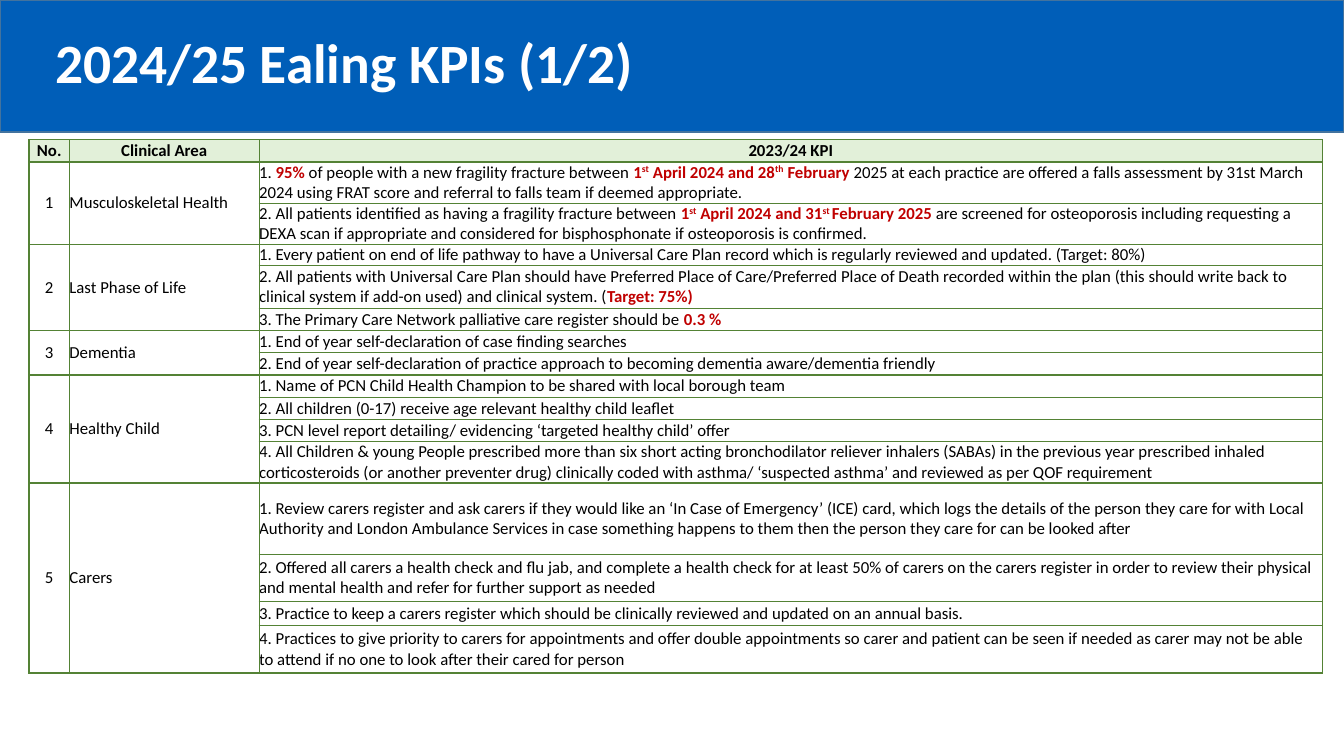
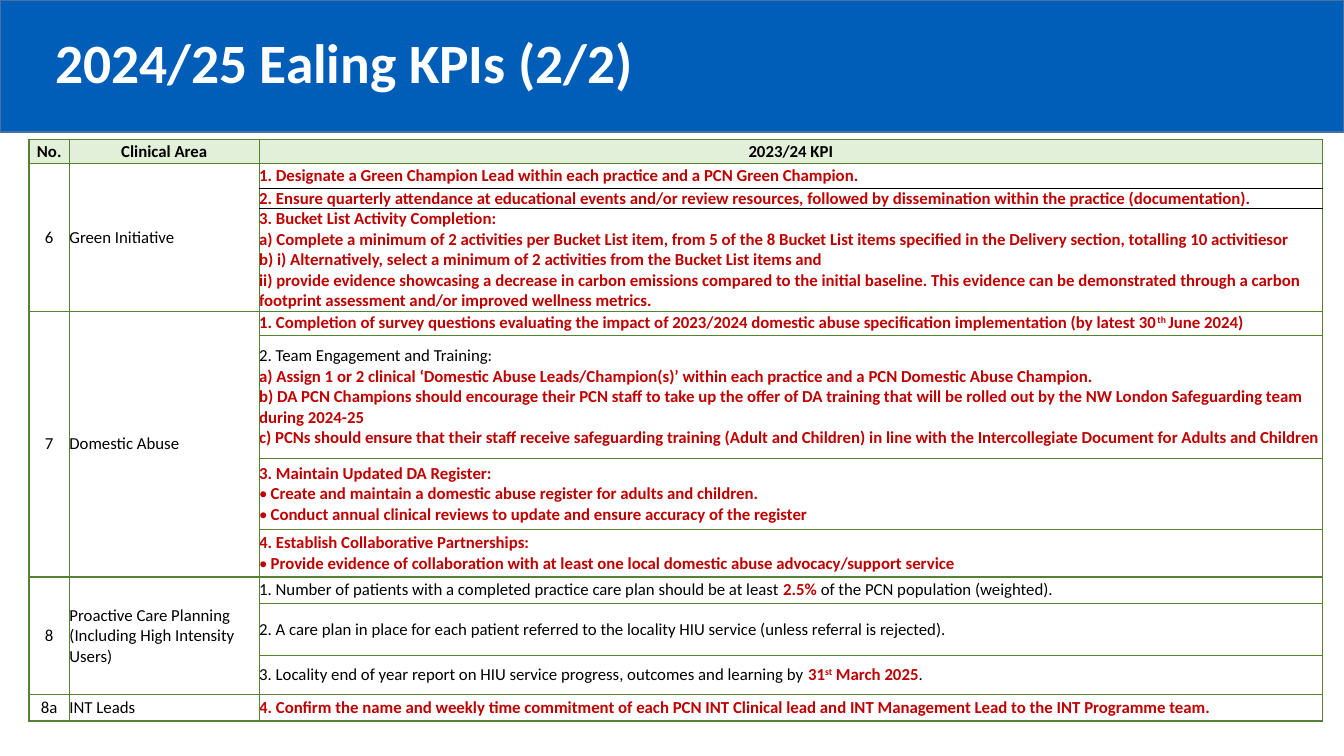
from lxml.etree import SubElement
from pptx import Presentation
from pptx.dml.color import RGBColor
from pptx.enum.shapes import MSO_SHAPE
from pptx.enum.text import MSO_ANCHOR, PP_ALIGN
from pptx.oxml.ns import qn
from pptx.util import Cm, Pt

BLUE = RGBColor(0x00, 0x5E, 0xB8)
BLUE_EDGE = RGBColor(0x43, 0x73, 0x9E)
GREEN = RGBColor(0x54, 0x82, 0x35)
PALE_GREEN = RGBColor(0xE2, 0xF0, 0xD9)
RED = RGBColor(0xC0, 0x00, 0x00)
BLACK = RGBColor(0x00, 0x00, 0x00)
WHITE = RGBColor(0xFF, 0xFF, 0xFF)

FONT = "Calibri"
SLIDE_WIDTH, SLIDE_HEIGHT = Cm(33.87), Cm(19.05)
COLUMN_WIDTHS = (1.02, 4.78, 26.8)
HEADINGS = ("No.", "Clinical Area", "2023/24 KPI")

# Each area: number, name, then its KPIs as (row height in cm, text).
# In a text, *...* is bold red, ^...^ is superscript and a leading • is a bullet.
AREAS_ONE = [
    ("1", "Musculoskeletal Health", [
        (1.04, "1. *95%* of people with a new fragility fracture between "
               "*1^st^ April 2024 and 28^th^ February *2025 at each practice are offered a "
               "falls assessment by 31st March 2024 using FRAT score and referral to falls "
               "team if deemed appropriate."),
        (1.04, "2. All patients identified as having a fragility fracture between "
               "*1^st^ April 2024 and 31^st ^February 2025 *are screened for osteoporosis "
               "including requesting a DEXA scan if appropriate and considered for "
               "bisphosphonate if osteoporosis is confirmed."),
    ]),
    ("2", "Last Phase of Life", [
        (0.52, "1. Every patient on end of life pathway to have a Universal Care Plan record "
               "which is regularly reviewed and updated. (Target: 80%)"),
        (1.09, "2. All patients with Universal Care Plan should have Preferred Place of "
               "Care/Preferred Place of Death recorded within the plan (this should write "
               "back to clinical system if add-on used) and clinical system. (*Target: 75%)*"),
        (0.56, "3. The Primary Care Network palliative care register should be *0.3 %*"),
    ]),
    ("3", "Dementia", [
        (0.56, "1. End of year self-declaration of case finding searches"),
        (0.56, "2. End of year self-declaration of practice approach to becoming dementia "
               "aware/dementia friendly"),
    ]),
    ("4", "Healthy Child", [
        (0.56, "1. Name of PCN Child Health Champion to be shared with local borough team"),
        (0.56, "2. All children (0-17) receive age relevant healthy child leaflet"),
        (0.56, "3. PCN level report detailing/ evidencing ‘targeted healthy child’ offer"),
        (1.04, "4. All Children & young People prescribed more than six short acting "
               "bronchodilator reliever inhalers (SABAs) in the previous year prescribed "
               "inhaled corticosteroids (or another preventer drug) clinically coded with "
               "asthma/ ‘suspected asthma’ and reviewed as per QOF requirement"),
    ]),
    ("5", "Carers", [
        (1.8, "1. Review carers register and ask carers if they would like an ‘In Case of "
              "Emergency’ (ICE) card, which logs the details of the person they care for "
              "with Local Authority and London Ambulance Services in case something happens "
              "to them then the person they care for can be looked after"),
        (1.19, "2. Offered all carers a health check and flu jab, and complete a health check "
               "for at least 50% of carers on the carers register in order to review their "
               "physical and mental health and refer for further support as needed"),
        (0.61, "3. Practice to keep a carers register which should be clinically reviewed and "
               "updated on an annual basis."),
        (1.19, "4. Practices to give priority to carers for appointments and offer double "
               "appointments so carer and patient can be seen if needed as carer may not be "
               "able to attend if no one to look after their cared for person"),
    ]),
]

AREAS_TWO = [
    ("6", "Green Initiative", [
        (0.61, "*1. Designate a Green Champion Lead within each practice and a PCN Green "
               "Champion.*"),
        (0.52, "*2. Ensure quarterly attendance at educational events and/or review resources, "
               "followed by dissemination within the practice (documentation).*"),
        (2.58, "*3. Bucket List Activity Completion:*\n"
               "*a) Complete a minimum of 2 activities per Bucket List item, from 5 of the 8 "
               "Bucket List items specified in the Delivery section, totalling 10 "
               "activitiesor*\n"
               "*b) i) Alternatively, select a minimum of 2 activities from the Bucket List "
               "items and*\n"
               "*ii) provide evidence showcasing a decrease in carbon emissions compared to "
               "the initial baseline. This evidence can be demonstrated through a carbon "
               "footprint assessment and/or improved wellness metrics.*"),
    ]),
    ("7", "Domestic Abuse", [
        (0.61, "*1. Completion of survey questions evaluating the impact of 2023/2024 domestic "
               "abuse specification implementation (by latest 30^th ^June 2024)*"),
        (3.1, "2. Team Engagement and Training:\n"
              "*a) Assign 1 or 2 clinical ‘Domestic Abuse Leads/Champion(s)’ within each "
              "practice and a PCN Domestic Abuse Champion.*\n"
              "*b) DA PCN Champions should encourage their PCN staff to take up the offer of "
              "DA training that will be rolled out by the NW London Safeguarding team during "
              "2024-25*\n"
              "*c) PCNs should ensure that their staff receive safeguarding training (Adult "
              "and Children) in line with the Intercollegiate Document for Adults and "
              "Children*"),
        (1.8, "*3. Maintain Updated DA Register:*\n"
              "•*Create and maintain a domestic abuse register for adults and children.*\n"
              "•*Conduct annual clinical reviews to update and ensure accuracy of the "
              "register*"),
        (1.19, "*4. Establish Collaborative Partnerships:*\n"
               "•*Provide evidence of collaboration with at least one local domestic abuse "
               "advocacy/support service*"),
    ]),
    ("8", "Proactive Care Planning (Including High Intensity Users)", [
        (0.66, "1. Number of patients with a completed practice care plan should be at least "
               "*2.5%* of the PCN population (weighted)."),
        (1.32, "2. A care plan in place for each patient referred to the locality HIU service "
               "(unless referral is rejected)."),
        (0.99, "3. Locality end of year report on HIU service progress, outcomes and learning "
               "by *31^st^ March 2025*."),
    ]),
    ("8a", "INT Leads", [
        (0.66, "*4. Confirm the name and weekly time commitment of each PCN INT Clinical lead "
               "and INT Management Lead to the INT Programme team.*"),
    ]),
]


class KpiDeck:
    """Holds the shared style and the current slide."""

    def __init__(self):
        self.deck = Presentation()
        self.deck.slide_width, self.deck.slide_height = SLIDE_WIDTH, SLIDE_HEIGHT
        self.slide = None

    def add_slide(self, title):
        self.slide = self.deck.slides.add_slide(self.deck.slide_layouts[6])
        self.add_band()
        self.add_title(title)

    def add_band(self):
        band = self.slide.shapes.add_shape(MSO_SHAPE.RECTANGLE, 0, 0, SLIDE_WIDTH, Cm(3.33))
        band.shadow.inherit = False
        band.fill.solid()
        band.fill.fore_color.rgb = BLUE
        band.line.color.rgb = BLUE_EDGE
        band.line.width = Pt(1)

    def add_title(self, text):
        box = self.slide.shapes.add_textbox(Cm(1.14), Cm(0.91), Cm(31.6), Cm(1.5))
        frame = box.text_frame
        frame.word_wrap = True
        frame.vertical_anchor = MSO_ANCHOR.MIDDLE
        frame.text = text
        paragraph = frame.paragraphs[0]
        paragraph.line_spacing = 0.9
        self.format_span(paragraph.runs[0], 39.6, WHITE, True)

    def format_span(self, span, size, color, bold):
        span.font.name = FONT
        span.font.size = Pt(size)
        span.font.color.rgb = color
        span.font.bold = bold

    def add_kpi_table(self, header_height, areas, black_rules=()):
        """Build the KPI table; black_rules lists the rows with a black line below the KPI."""
        heights = [header_height] + [height for *_, kpis in areas for height, _ in kpis]
        table = self.slide.shapes.add_table(
            len(heights), len(HEADINGS), Cm(0.73), Cm(3.52),
            Cm(sum(COLUMN_WIDTHS)), Cm(sum(heights))).table
        table.first_row = table.horz_banding = False
        for column, width in zip(table.columns, COLUMN_WIDTHS):
            column.width = Cm(width)
        for row, height in zip(table.rows, heights):
            row.height = Cm(height)

        # Borders and fills
        for row in range(len(heights)):
            for column in range(len(HEADINGS)):
                is_kpi = column == len(HEADINGS) - 1
                top = BLACK if is_kpi and row - 1 in black_rules else GREEN
                bottom = BLACK if is_kpi and row in black_rules else GREEN
                self.style_cell(table.cell(row, column), PALE_GREEN if row == 0 else WHITE,
                                top, bottom)

        # Headings, then one merged block per clinical area
        for column, heading in enumerate(HEADINGS):
            self.fill_cell(table.cell(0, column), heading, PP_ALIGN.CENTER, True)
        first = 1
        for number, name, kpis in areas:
            if len(kpis) > 1:
                for column in (0, 1):
                    table.cell(first, column).merge(table.cell(first + len(kpis) - 1, column))
            self.fill_cell(table.cell(first, 0), number, PP_ALIGN.CENTER)
            self.fill_cell(table.cell(first, 1), name)
            for row, (_, text) in enumerate(kpis, first):
                self.fill_cell(table.cell(row, 2), text)
            first += len(kpis)

    def style_cell(self, cell, fill, top, bottom):
        cell.margin_left = cell.margin_right = cell.margin_top = cell.margin_bottom = 0
        cell.vertical_anchor = MSO_ANCHOR.MIDDLE
        properties = cell._tc.get_or_add_tcPr()
        for side, color in (("L", GREEN), ("R", GREEN), ("T", top), ("B", bottom)):
            line = SubElement(properties, qn(f"a:ln{side}"), w=str(Pt(1)))
            SubElement(SubElement(line, qn("a:solidFill")), qn("a:srgbClr"), val=str(color))
        cell.fill.solid()
        cell.fill.fore_color.rgb = fill

    def fill_cell(self, cell, text, alignment=PP_ALIGN.LEFT, bold=False):
        frame = cell.text_frame
        for index, line in enumerate(text.split("\n")):
            paragraph = frame.add_paragraph() if index else frame.paragraphs[0]
            paragraph.alignment = alignment
            if line.startswith("•"):
                self.add_bullet(paragraph)
            self.add_spans(paragraph, line.removeprefix("•"), bold)

    def add_bullet(self, paragraph):
        properties = paragraph._p.get_or_add_pPr()
        properties.set("marL", str(Cm(0.29)))
        properties.set("indent", str(-Cm(0.29)))
        SubElement(properties, qn("a:buFont"), typeface=FONT)
        SubElement(properties, qn("a:buChar"), char="•")

    def add_spans(self, paragraph, line, bold):
        for red, part in enumerate(line.split("*")):
            is_red = red % 2 == 1
            for raised, words in enumerate(part.split("^")):
                if not words:
                    continue
                span = paragraph.add_run()
                span.text = words
                self.format_span(span, 12, RED if is_red else BLACK, bold or is_red)
                if raised % 2:
                    span._r.get_or_add_rPr().set("baseline", "30000")


def main():
    kpis = KpiDeck()

    # Areas 1 to 5
    kpis.add_slide("2024/25 Ealing KPIs (1/2)")
    kpis.add_kpi_table(0.56, AREAS_ONE)

    # Areas 6 to 8a
    kpis.add_slide("2024/25 Ealing KPIs (2/2)")
    kpis.add_kpi_table(0.61, AREAS_TWO, black_rules=(1, 2))

    kpis.deck.save("out.pptx")


if __name__ == "__main__":
    main()
